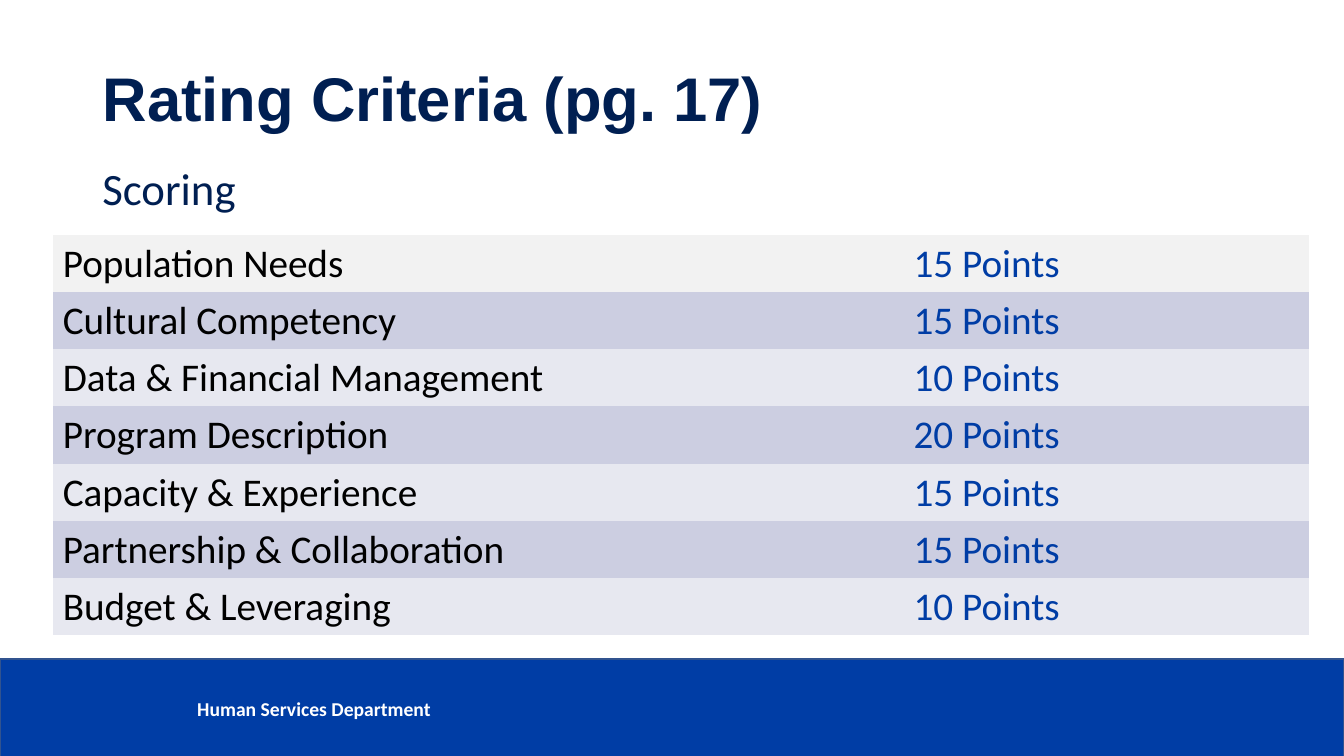
"""Build the rating criteria slide with its scoring table."""
from dataclasses import dataclass

from pptx import Presentation
from pptx import util as u
from pptx.dml.color import RGBColor
from pptx.enum import shapes, text

NAVY, BLUE, BLACK, WHITE = "001F52", "003DA5", "000000", "FFFFFF"
FIRST_ROW, DARK_BAND, LIGHT_BAND = "F2F2F2", "CCCEE1", "E7E8F0"
ROW_HEIGHT = 1.44
COLUMN_WIDTHS = (21.44, 10.21)


@dataclass(frozen=True)
class Criterion:
    name: str
    points: int


@dataclass(frozen=True)
class Box:
    left: float
    top: float
    width: float
    height: float

    def lengths(self) -> tuple:
        return tuple(u.Cm(n) for n in (self.left, self.top, self.width, self.height))


CRITERIA = (
    Criterion("Population Needs", 15),
    Criterion("Cultural Competency", 15),
    Criterion("Data & Financial Management", 10),
    Criterion("Program Description", 20),
    Criterion("Capacity & Experience", 15),
    Criterion("Partnership & Collaboration", 15),
    Criterion("Budget & Leveraging", 10),
)


def paint(colour_format, colour: str) -> None:
    colour_format.rgb = RGBColor.from_string(colour)


def fill_solid(target, colour: str) -> None:
    target.fill.solid()
    paint(target.fill.fore_color, colour)


def write(frame, wording: str, *, size: float, colour: str, font: str = "Calibri",
          bold: bool = False, spacing: float = 1.0) -> None:
    frame.text = wording
    paragraph = frame.paragraphs[0]
    paragraph.alignment = text.PP_ALIGN.LEFT
    paragraph.line_spacing = spacing
    style = paragraph.runs[0].font
    style.name, style.size, style.bold = font, u.Pt(size), bold
    paint(style.color, colour)


def add_label(slide, box: Box, wording: str, anchor, **style) -> None:
    frame = slide.shapes.add_textbox(*box.lengths()).text_frame
    frame.word_wrap = True
    frame.vertical_anchor = anchor
    write(frame, wording, **style)


def add_footer(slide) -> None:
    band = slide.shapes.add_shape(shapes.MSO_SHAPE.RECTANGLE,
                                  *Box(0, 16.61, 33.87, 2.49).lengths())
    band.shadow.inherit = False
    fill_solid(band, BLUE)
    paint(band.line.color, "31538F")
    band.line.width = u.Pt(1)
    add_label(slide, Box(4.72, 17.35, 8.33, 1.02), "Human Services Department",
              text.MSO_ANCHOR.MIDDLE, size=14, colour=WHITE, bold=True)


def format_title(slide) -> None:
    title = slide.shapes.title
    title.left, title.top, title.width, title.height = Box(2.33, 1.02, 29.21, 3.07).lengths()
    frame = title.text_frame
    frame.auto_size = text.MSO_AUTO_SIZE.NONE
    frame.vertical_anchor = text.MSO_ANCHOR.MIDDLE
    write(frame, "Rating Criteria (pg. 17)", size=44, colour=NAVY, font="Arial",
          bold=True, spacing=0.9)


def band_colour(row: int) -> str:
    if row == 0:
        return FIRST_ROW
    return DARK_BAND if row % 2 else LIGHT_BAND


def add_scores(slide, criteria: tuple[Criterion, ...]) -> None:
    box = Box(1.33, 5.92, sum(COLUMN_WIDTHS), ROW_HEIGHT * len(criteria))
    table = slide.shapes.add_table(len(criteria), len(COLUMN_WIDTHS), *box.lengths()).table
    table.first_row = table.horz_banding = False
    for column, width in zip(table.columns, COLUMN_WIDTHS):
        column.width = u.Cm(width)
    for row, criterion in enumerate(criteria):
        entries = ((criterion.name, BLACK), (f"{criterion.points} Points", BLUE))
        for column, (wording, colour) in enumerate(entries):
            cell = table.cell(row, column)
            fill_solid(cell, band_colour(row))
            write(cell.text_frame, wording, size=28, colour=colour)
    clear_borders(table)


def clear_borders(table) -> None:
    for cell in table.iter_cells():
        properties = cell._tc.get_or_add_tcPr()
        for position, side in enumerate(("lnL", "lnR", "lnT", "lnB")):
            line = properties.makeelement(
                "{http://schemas.openxmlformats.org/drawingml/2006/main}" + side, {"w": "0"})
            line.append(line.makeelement(
                "{http://schemas.openxmlformats.org/drawingml/2006/main}noFill", {}))
            properties.insert(position, line)


def main() -> None:
    deck = Presentation()
    deck.slide_width, deck.slide_height = u.Cm(33.87), u.Cm(19.05)
    slide = deck.slides.add_slide(deck.slide_layouts[5])
    add_footer(slide)
    format_title(slide)
    add_label(slide, Box(2.33, 4.09, 29.21, 12.34), "Scoring", text.MSO_ANCHOR.TOP,
              size=32, colour=NAVY, spacing=0.9)
    add_scores(slide, CRITERIA)
    deck.save("out.pptx")


if __name__ == "__main__":
    main()
